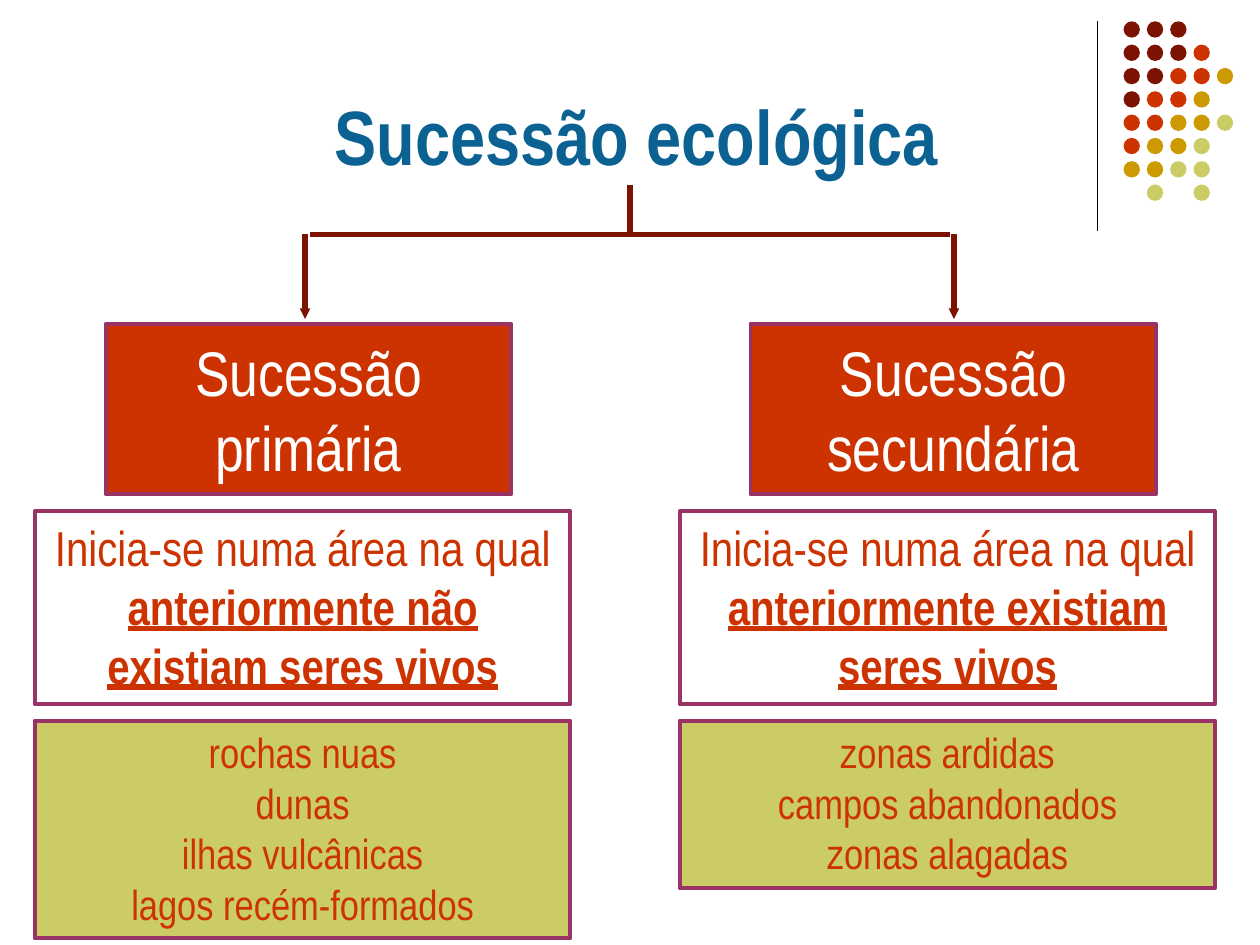
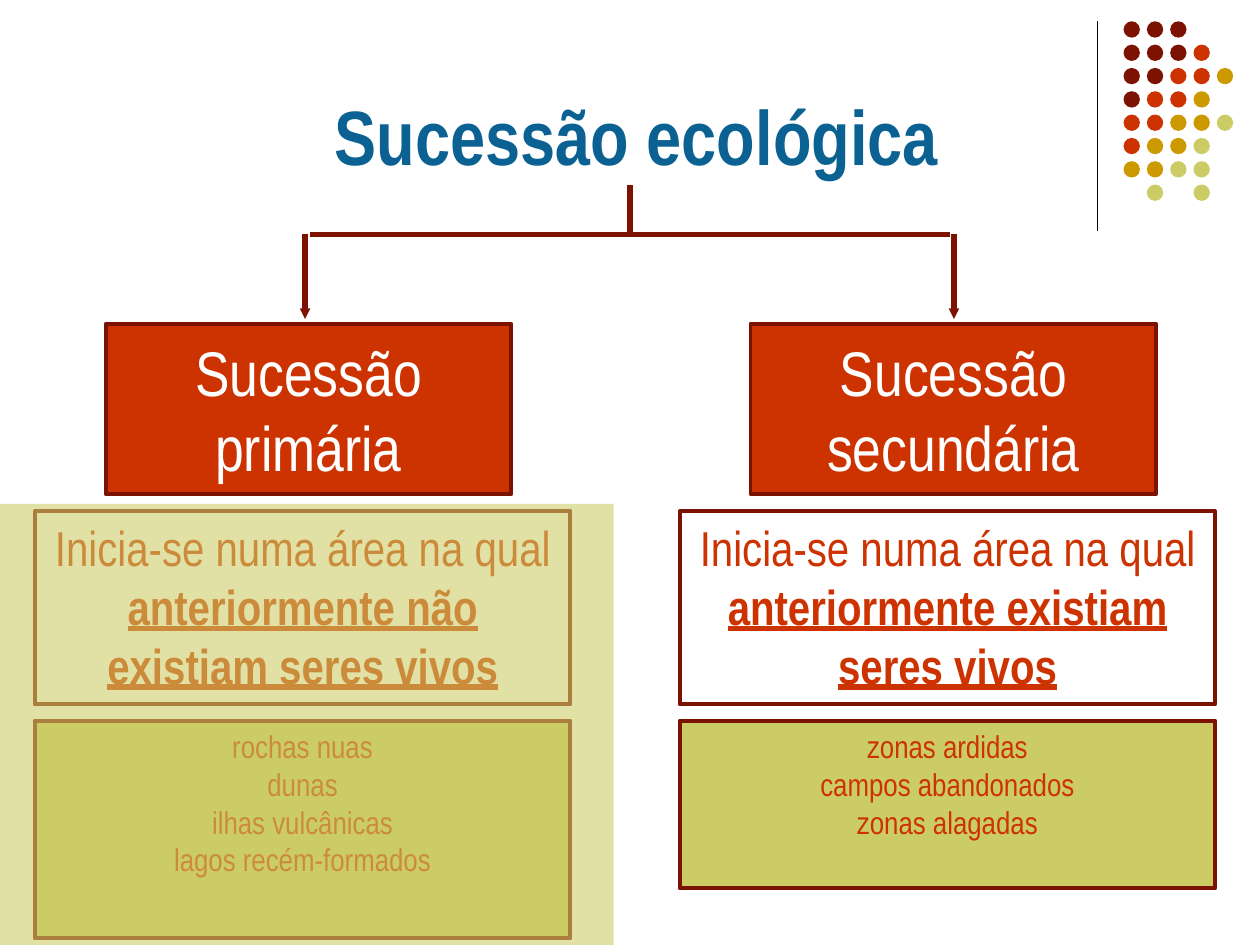
from lxml import etree
from pptx import Presentation
from pptx.dml.color import RGBColor
from pptx.enum.shapes import MSO_CONNECTOR, MSO_SHAPE
from pptx.enum.text import MSO_ANCHOR, MSO_AUTO_SIZE, PP_ALIGN
from pptx.oxml.ns import qn
from pptx.util import Cm, Pt

FONT = "Arial Narrow"
BLUE, WHITE, BLACK = "0A6192", "FFFFFF", "000000"
MAROON, RED, OCHRE, LIME, PURPLE = "7C1302", "CC3300", "CC9900", "CCCC66", "993366"
rgb = RGBColor.from_string


def write(p, text, size=24, color=RED, bold=False, underline=False):
    p.alignment = PP_ALIGN.CENTER
    r = p.add_run()
    r.text = text
    f = r.font
    f.name, f.size, f.bold, f.underline = FONT, Pt(size), bold, underline
    f.color.rgb = rgb(color)


def add_box(shapes, x, y, w, h, fill, line=None, kind=MSO_SHAPE.RECTANGLE):
    sp = shapes.add_shape(kind, Cm(x), Cm(y), Cm(w), Cm(h))
    sp.shadow.inherit = False
    sp.fill.solid()
    sp.fill.fore_color.rgb = rgb(fill)
    if line:
        sp.line.color.rgb = rgb(line)
        sp.line.width = Pt(2.25)
    else:
        sp.line.fill.background()
    sp.text_frame.word_wrap = True
    sp.text_frame.vertical_anchor = MSO_ANCHOR.TOP
    return sp


prs = Presentation()
prs.slide_width, prs.slide_height = Cm(25.4), Cm(19.05)
layout = prs.slide_layouts[5]

# Content of the two columns: heading lines, key phrase, examples, examples height
COLUMN_STEP = 13
columns = [
    (["Sucessão primária"], "anteriormente não existiam seres vivos",
     ["rochas nuas", "dunas", "ilhas vulcânicas", "lagos recém-formados"], 4.39),
    (["Sucessão", "secundária"], "anteriormente existiam seres vivos",
     ["zonas ardidas", "campos abandonados", "zonas alagadas"], 3.38),
]

# Tree under the title: x1, y1, x2, y2, arrowhead
branches = [
    (12.7, 3.73, 12.7, 4.72, False),
    (6.15, 4.72, 6.15, 6.43, True),
    (19.23, 4.72, 19.23, 6.43, True),
    (6.25, 4.72, 19.15, 4.72, False),
]

# Corner ornament: one letter per dot
DOT_COLORS = {"M": MAROON, "R": RED, "O": OCHRE, "L": LIME}
DOT_ROWS = ["MMM", "MMMR", "MMRRO", "MRRO", "RROOL", "ROOL", "OOLL", " L L"]
DOT_STEP = 0.47

for border, example_size in [(PURPLE, 24), (MAROON, 18)]:
    s = prs.slides.add_slide(layout)

    # Title
    title = s.shapes.title
    title.left, title.top, title.width, title.height = Cm(1.9), Cm(1.12), Cm(21.87), Cm(3.2)
    tf = title.text_frame
    tf.auto_size = MSO_AUTO_SIZE.NONE
    tf.vertical_anchor = MSO_ANCHOR.MIDDLE
    write(tf.paragraphs[0], "Sucessão ecológica", size=44, color=BLUE, bold=True)

    # Branches
    for x1, y1, x2, y2, arrow in branches:
        c = s.shapes.add_connector(MSO_CONNECTOR.STRAIGHT, Cm(x1), Cm(y1), Cm(x2), Cm(y2))
        c.line.color.rgb = rgb(MAROON)
        c.line.width = Pt(3)
        if arrow:
            etree.SubElement(c.line._get_or_add_ln(), qn("a:tailEnd"),
                             type="triangle", w="sm", len="sm")
        etree.SubElement(c.element.spPr, qn("a:effectLst"))

    # Columns
    for i, (heading, key_phrase, examples, examples_height) in enumerate(columns):
        dx = i * COLUMN_STEP
        head = add_box(s.shapes, 2.13 + dx, 6.53, 8.18, 3.43, RED, border)
        head.text_frame.vertical_anchor = MSO_ANCHOR.MIDDLE
        definition = add_box(s.shapes, 0.7 + dx, 10.31, 10.8, 3.89, WHITE, border)
        p = definition.text_frame.paragraphs[0]
        write(p, "Inicia-se numa área na qual ", size=28)
        write(p, key_phrase, size=28, bold=True, underline=True)
        places = add_box(s.shapes, 0.7 + dx, 14.53, 10.8, examples_height, LIME, border)
        for sp, lines, size, color in [(head, heading, 36, WHITE),
                                       (places, examples, example_size, RED)]:
            tf = sp.text_frame
            for n, text in enumerate(lines):
                p = tf.add_paragraph() if n else tf.paragraphs[0]
                write(p, text, size=size, color=color)

# Veil over the left column of the second slide
veil = add_box(s.shapes, 0, 10.16, 12.37, 8.89, LIME)
veil_color = veil.element.spPr.find(qn("a:solidFill"))[0]
etree.SubElement(veil_color, qn("a:alpha"), val="58000")

# Ornament shared by both slides, moved into the layout
ornament = s.shapes.add_group_shape()
rule = ornament.shapes.add_connector(MSO_CONNECTOR.STRAIGHT, Cm(22.12), Cm(0.43), Cm(22.12), Cm(4.65))
rule.line.color.rgb = rgb(BLACK)
rule.line.width = Pt(0.75)
etree.SubElement(rule.element.spPr, qn("a:effectLst"))
for row, letters in enumerate(DOT_ROWS):
    for col, letter in enumerate(letters):
        if letter in DOT_COLORS:
            add_box(ornament.shapes, 22.65 + col * DOT_STEP, 0.43 + row * DOT_STEP,
                    0.33, 0.33, DOT_COLORS[letter], kind=MSO_SHAPE.OVAL)
tree = layout.shapes.element
tree.append(ornament.element)
for number, props in enumerate(tree.iter(qn("p:cNvPr")), start=1):
    props.set("id", str(number))

prs.save("out.pptx")
